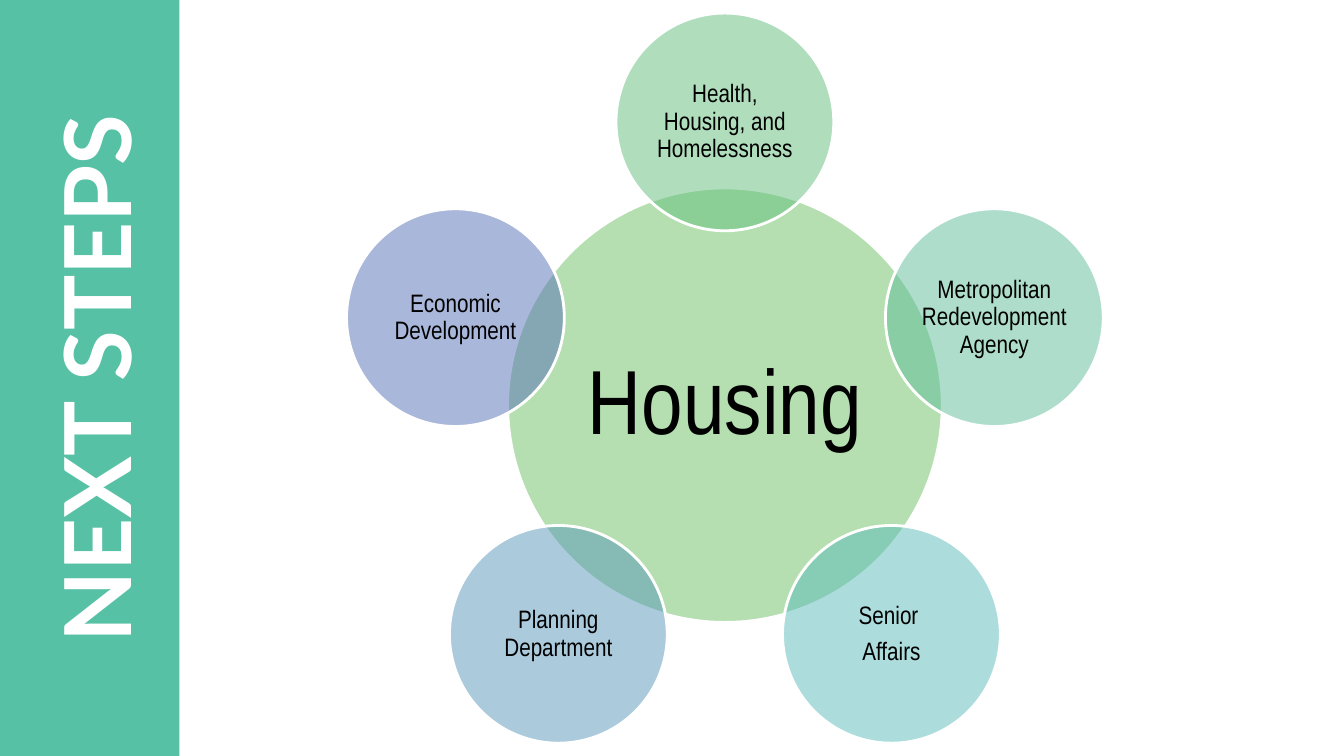
"""Build the Next Steps slide: a housing hub ringed by five departments."""
from math import cos, radians, sin

from lxml import etree
from pptx import Presentation
from pptx.dml.color import RGBColor
from pptx.enum.shapes import MSO_SHAPE
from pptx.enum.text import MSO_ANCHOR, PP_ALIGN
from pptx.oxml.ns import qn
from pptx.util import Inches, Pt

RECTANGLE = MSO_SHAPE.RECTANGLE
OVAL = MSO_SHAPE.OVAL
MIDDLE = MSO_ANCHOR.MIDDLE
CENTER = PP_ALIGN.CENTER

HUB_X, HUB_Y = 7.19, 4.02
HUB_SIZE = 4.31
RING_RADIUS = 2.81
RING_SIZE = 2.16
DEPARTMENTS = [
    (["Health, Housing, and Homelessness"], "62BE7C"),
    (["Metropolitan Redevelopment Agency"], "5FBC9A"),
    (["Senior ", "Affairs"], "5BBABA"),
    (["Planning Department"], "5896B8"),
    (["Economic Development"], "5571B6"),
]


def rgb(color):
    return RGBColor.from_string(color)


def add_circle(x, y, size, color, lines, points, inset):
    s = slide.shapes.add_shape(OVAL, Inches(x - size / 2), Inches(y - size / 2),
                               Inches(size), Inches(size))
    s.shadow.inherit = False
    s.fill.solid()
    s.fill.fore_color.rgb = rgb(color)
    fill = s.fill._xPr.find(qn("a:solidFill"))
    etree.SubElement(fill[0], qn("a:alpha"), val="50000")
    s.line.color.rgb = rgb("FFFFFF")
    s.line.width = Pt(2)
    tf = s.text_frame
    tf.word_wrap = True
    tf.vertical_anchor = MIDDLE
    tf.margin_left = tf.margin_right = Inches(inset)
    tf.margin_top = tf.margin_bottom = Inches(inset)
    for i, line in enumerate(lines):
        p = tf.add_paragraph() if i else tf.paragraphs[0]
        p.alignment = CENTER
        p.line_spacing = 0.9
        p.space_after = Pt(points * 0.35)
        r = p.add_run()
        r.text = line
        r.font.name = "Arial Narrow"
        r.font.size = Pt(points)
        r.font.color.rgb = rgb("000000")


prs = Presentation()
prs.slide_width = Inches(13.33)
prs.slide_height = Inches(7.5)
slide = prs.slides.add_slide(prs.slide_layouts[6])

band = slide.shapes.add_shape(RECTANGLE, 0, 0, Inches(1.78), Inches(7.5))
band.shadow.inherit = False
band.fill.solid()
band.fill.fore_color.rgb = rgb("57C1A6")
band.line.fill.background()

title = slide.shapes.add_textbox(Inches(-2.66), Inches(2.92), Inches(7.2), Inches(1.67))
title.rotation = 270
tf = title.text_frame
tf.word_wrap = True
tf.vertical_anchor = MIDDLE
p = tf.paragraphs[0]
p.alignment = CENTER
r = p.add_run()
r.text = "NEXT STEPS"
r.font.name = "Lato"
r.font.size = Pt(66)
r.font.bold = True
r.font.color.rgb = rgb("FFFFFF")

add_circle(HUB_X, HUB_Y, HUB_SIZE, "6CC065", ["Housing"], 65, 0.09)
for i, (lines, color) in enumerate(DEPARTMENTS):
    angle = radians(360 / len(DEPARTMENTS) * i)
    add_circle(HUB_X + RING_RADIUS * sin(angle), HUB_Y - RING_RADIUS * cos(angle),
               RING_SIZE, color, lines, 18, 0.03)

prs.save("out.pptx")
